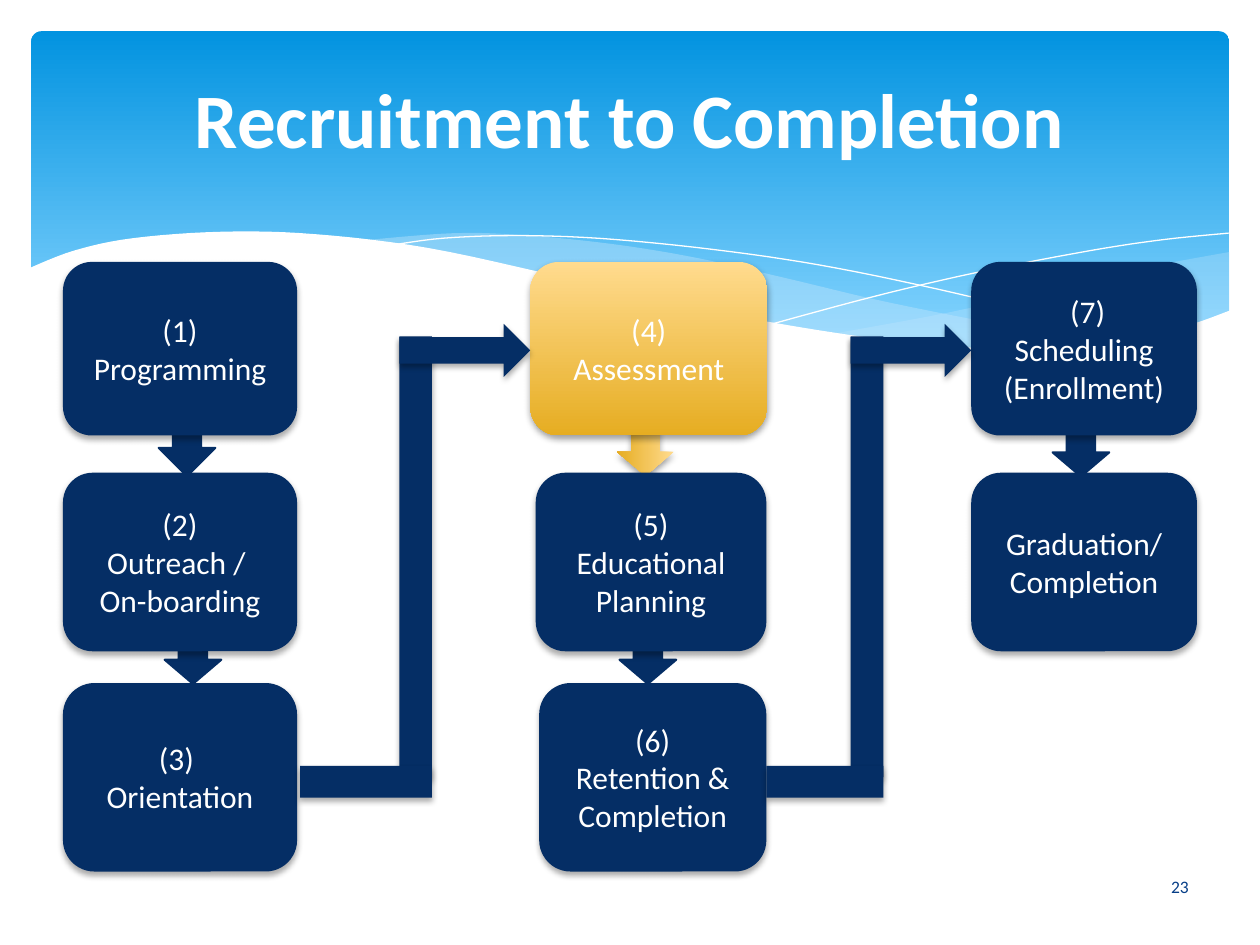
"""Builds the Recruitment to Completion flow slide."""
from lxml import etree
from pptx import Presentation, util as u
from pptx.dml.color import RGBColor
from pptx.enum import shapes, text
from pptx.oxml import ns

FONT = "Calibri"
WHITE = RGBColor(0xFF, 0xFF, 0xFF)
NAVY = RGBColor(0x05, 0x2E, 0x65)
NUMBER_BLUE = RGBColor(0x07, 0x3E, 0x87)
MIST = RGBColor(0xC6, 0xE7, 0xFC)
SKY = [(0, RGBColor(0x02, 0x93, 0xE0)), (0.9, RGBColor(0x83, 0xD3, 0xFE))]
GOLD = [(0, RGBColor(0xFF, 0xDB, 0x8E)), (1, RGBColor(0xE6, 0xAD, 0x22))]
NAVY_SHADOW = (32, 3.5, 2.2)
GOLD_SHADOW = (38, 4, 2)

TITLE = "Recruitment to Completion"
PAGE = "23"
ROWS = [(5.28, 3.5), (9.53, 3.6), (13.77, 3.8)]
BOXES = [
    (0, 1.27, 5.99, NAVY, ["(1)", "Programming"]),
    (1, 1.27, 5.99, NAVY, ["(2)", "Outreach / ", "On-boarding"]),
    (2, 1.27, 5.99, NAVY, ["(3) ", "Orientation"]),
    (0, 10.69, 15.47, GOLD, ["(4)", "Assessment"]),
    (1, 10.8, 15.45, NAVY, ["(5)", "Educational Planning"]),
    (2, 10.87, 15.45, NAVY, ["(6)", "Retention &", "Completion"]),
    (0, 19.58, 24.13, NAVY, [" (7)", "Scheduling", "(Enrollment)"]),
    (1, 19.58, 24.13, NAVY, ["Graduation/", "Completion"]),
]
DOWN_ARROWS = [
    (3.77, 9.03, 1.14, NAVY),
    (3.89, 13.3, 0.97, NAVY),
    (13.06, 13.3, 0.97, NAVY),
    (13.01, 9.11, 0.97, GOLD),
    (21.79, 9.12, 0.97, NAVY),
]
ELBOWS = [(15.45, 17.15, 19.58), (6.05, 8.05, 10.69)]

RIGHT_BAND = [
    [(24.79, 5.08), (23.01, 5.41), (21.13, 5.84), (19.13, 6.3), (16.79, 6.73)],
    [(16.79, 6.73), (18.26, 6.91), (19.84, 7.04), (21.21, 7.04), (22.58, 6.91),
     (23.75, 6.65), (24.79, 6.27)],
]
MIDDLE_BAND = [
    [(22.68, 6.93), (20.5, 6.6), (17.93, 6.1), (15.98, 5.64), (14.1, 5.21),
     (12.42, 4.93), (10.67, 4.75), (9.17, 4.7), (7.26, 4.85)],
    [(7.26, 4.85), (9.19, 5.16), (11.4, 5.64), (13.46, 6.1), (15.7, 6.55),
     (17.65, 6.86), (19.33, 7.04), (21.03, 7.06), (22.68, 6.93)],
]
FALLING_LINE = [(7.85, 4.95), (8.97, 4.8), (10.57, 4.75), (12.42, 4.83), (14.78, 5.08),
                (16.89, 5.41), (19.3, 5.92), (21.11, 6.38), (23.04, 6.91)]
RISING_LINE = [(15.57, 6.53), (17.65, 5.97), (19.71, 5.49), (22, 5.05),
               (23.47, 4.83), (24.77, 4.7)]
WHITE_WAVE = [
    [(0.58, 5.41), (1.5, 5.05), (2.69, 4.8), (4.5, 4.67), (6.35, 4.72), (8.64, 5),
     (11.35, 5.59), (14.1, 6.22), (16.46, 6.65), (18.44, 6.91), (20.55, 7.04),
     (22.53, 6.88), (23.88, 6.58), (24.82, 6.25)],
    [(24.82, 8.36), (0.58, 8.36)],
]


def smooth(points, steps=6):
    padded = [points[0], *points, points[-1]]
    curve = [points[0]]
    for a, b, c, d in zip(padded, padded[1:], padded[2:], padded[3:]):
        for step in range(1, steps + 1):
            t = step / steps
            curve.append(tuple(
                0.5 * (2 * q + (r - p) * t + (2 * p - 5 * q + 4 * r - s) * t ** 2
                       + (3 * q - p - 3 * r + s) * t ** 3)
                for p, q, r, s in zip(a, b, c, d)))
    return curve


def paint(shape, fill):
    if isinstance(fill, RGBColor):
        shape.fill.solid()
        shape.fill.fore_color.rgb = fill
        return
    shape.fill.gradient()
    shape.fill.gradient_angle = 270
    for stop, (position, color) in zip(shape.fill.gradient_stops, fill):
        stop.position = position
        stop.color.rgb = color


def add_child(parent, tag, **attributes):
    values = {name: str(value) for name, value in attributes.items()}
    return etree.SubElement(parent, ns.qn(tag), values)


def add_shadow(shape, alpha, blur, distance):
    effects = shape.element.spPr.find(ns.qn("a:effectLst"))
    shadow = add_child(effects, "a:outerShdw", blurRad=u.Pt(blur), dist=u.Pt(distance),
                       dir=5400000, algn="ctr", rotWithShape=0)
    add_child(add_child(shadow, "a:srgbClr", val="000000"), "a:alpha", val=alpha * 1000)


def add_block(slide, kind, left, top, width, height, fill, shadow=None):
    shape = slide.shapes.add_shape(kind, *map(u.Cm, (left, top, width, height)))
    shape.shadow.inherit = False
    paint(shape, fill)
    shape.line.fill.background()
    if shadow:
        add_shadow(shape, *shadow)
    return shape


def add_wave(slide, edges, fill=None, alpha=100):
    points = [(u.Cm(x), u.Cm(y)) for edge in edges for x, y in smooth(edge)]
    builder = slide.shapes.build_freeform(*points[0])
    builder.add_line_segments(points[1:], close=fill is not None)
    shape = builder.convert_to_shape()
    shape.shadow.inherit = False
    if fill is None:
        shape.fill.background()
        shape.line.color.rgb = WHITE
        shape.line.width = u.Pt(0)
    else:
        paint(shape, fill)
        shape.line.fill.background()
        color = shape.element.spPr.find(".//" + ns.qn("a:srgbClr"))
        add_child(color, "a:alpha", val=alpha * 1000)


def write(shape, lines, size, color, bold=False):
    frame = shape.text_frame
    frame.word_wrap = True
    frame.vertical_anchor = text.MSO_ANCHOR.MIDDLE
    frame.text = "\n".join(lines)
    for paragraph in frame.paragraphs:
        paragraph.alignment = text.PP_ALIGN.CENTER
        font = paragraph.font
        font.name, font.size, font.bold = FONT, u.Pt(size), bold
        font.color.rgb = color


def main():
    kinds = shapes.MSO_SHAPE
    presentation = Presentation()
    presentation.slide_width, presentation.slide_height = u.Cm(25.4), u.Cm(19.05)
    slide = presentation.slides.add_slide(presentation.slide_layouts[5])

    banner = add_block(slide, kinds.ROUNDED_RECTANGLE, 0.63, 0.63, 24.15, 6.86, SKY)
    banner.adjustments[0] = 0.03
    add_wave(slide, RIGHT_BAND, MIST, 29)
    add_wave(slide, MIDDLE_BAND, MIST, 40)
    add_wave(slide, [FALLING_LINE])
    add_wave(slide, [RISING_LINE])
    add_wave(slide, WHITE_WAVE, WHITE)

    title = slide.shapes.title
    title.left, title.top, title.width, title.height = map(u.Cm, (1.27, 0.63, 22.86, 3.48))
    write(title, [TITLE], 44, WHITE, True)
    slide.shapes.element.append(title.element)

    for center_x, center_y, length, fill in DOWN_ARROWS:
        arrow = add_block(slide, kinds.RIGHT_ARROW, center_x - length / 2, center_y - 0.57,
                          length, 1.14, fill, GOLD_SHADOW if fill is GOLD else None)
        arrow.rotation = 90
        if fill is NAVY:
            arrow.line.color.rgb = NAVY
            arrow.line.width = u.Pt(1.25)

    for row, left, right, fill, lines in BOXES:
        top, height = ROWS[row]
        box = add_block(slide, kinds.ROUNDED_RECTANGLE, left, top, right - left, height,
                        fill, GOLD_SHADOW if fill is GOLD else NAVY_SHADOW)
        write(box, lines, 18, WHITE)

    for start, bar, end in ELBOWS:
        for kind, left, top, width, height in [
            (kinds.RECTANGLE, bar, 6.78, 0.66, 8.89),
            (kinds.RECTANGLE, start, 15.44, bar + 0.66 - start, 0.64),
            (kinds.RIGHT_ARROW, bar, 6.53, end - bar, 1.07),
        ]:
            add_block(slide, kind, left, top, width, height, NAVY, NAVY_SHADOW)

    number = slide.shapes.add_textbox(*map(u.Cm, (22.17, 17.37, 3.23, 1.02)))
    write(number, [PAGE], 10, NUMBER_BLUE)
    presentation.save("out.pptx")


if __name__ == "__main__":
    main()
